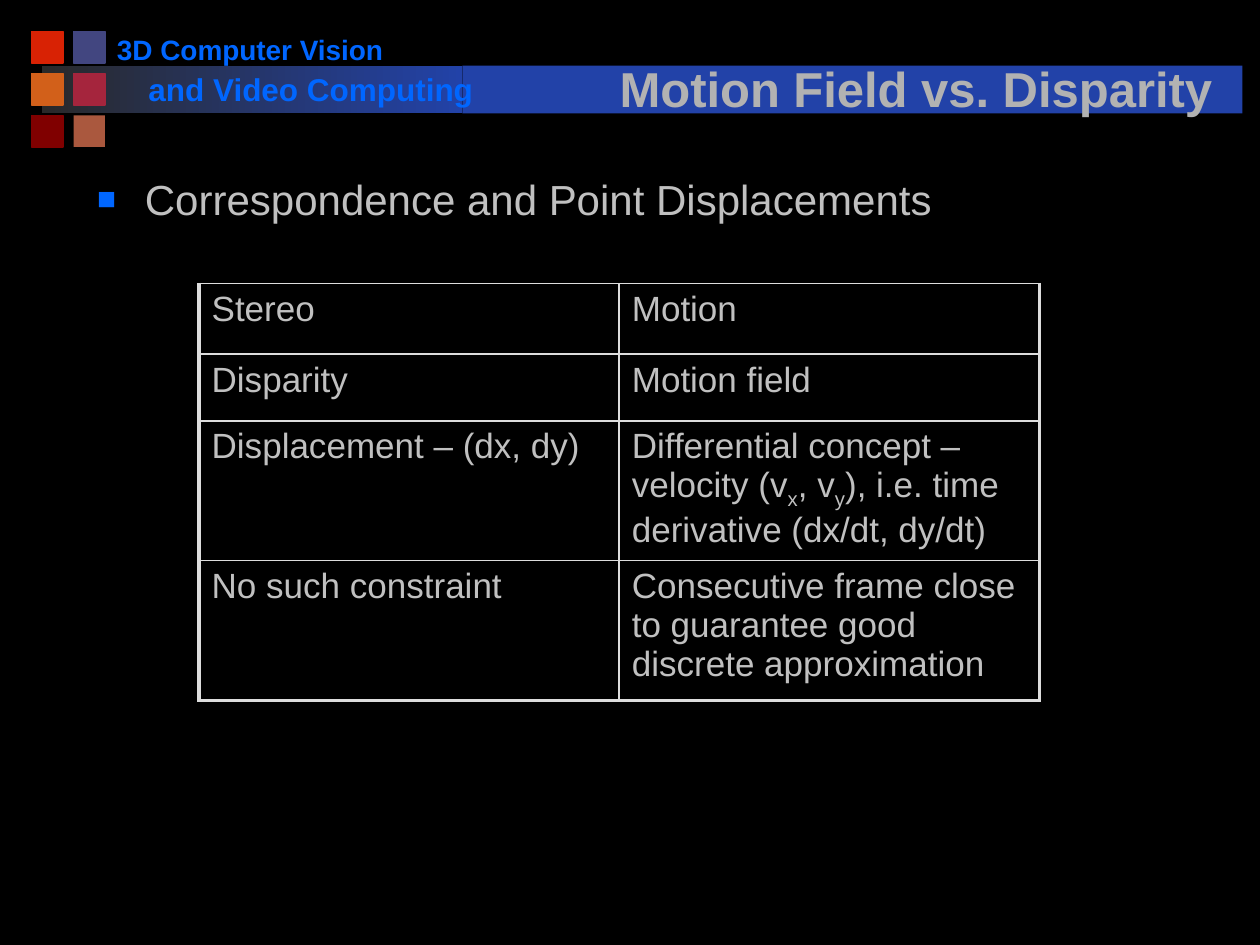
import pptx
import pptx.util
import pptx.dml.color
import pptx.enum.shapes
import pptx.enum.text
import pptx.oxml
import pptx.oxml.ns
import lxml.etree

WIDTH, HEIGHT = 10, 7.5
FONT = "Arial"
BLUE, BAND, GREY, BORDER = "0066FF", "2242A8", "C0C0C0", "DDDDDD"
SQUARES = [["D82204", "424680"], ["D2601A", "A5253D"], ["800000", "AA583E"]]
ROWS = [
    (0.56, "Stereo", "Motion"),
    (0.53, "Disparity", "Motion field"),
    (1.11, "Displacement – (dx, dy)",
     ["Differential concept – velocity (v", ("x",), ", v", ("y",),
      "), i.e. time derivative (dx/dt, dy/dt)"]),
    (1.11, "No such constraint",
     "Consecutive frame close to guarantee good discrete approximation"),
]


def inches(*values):
    return [pptx.util.Inches(value) for value in values]


def color(hex_text):
    return pptx.dml.color.RGBColor.from_string(hex_text)


def add_xml(parent, tag, **attributes):
    child = lxml.etree.SubElement(parent, pptx.oxml.ns.qn("a:" + tag))
    for name, value in attributes.items():
        child.set(name, str(value))
    return child


def write(frame, text, size=20, ink=GREY, bold=False, align="LEFT",
          anchor="TOP", wrap=True, percent_before=0):
    """Fill a text frame; a tuple among the pieces of text is a subscript."""
    frame.word_wrap = wrap
    frame.vertical_anchor = getattr(pptx.enum.text.MSO_ANCHOR, anchor)
    paragraph = frame.paragraphs[0]
    paragraph.alignment = getattr(pptx.enum.text.PP_ALIGN, align)
    if percent_before:
        before = add_xml(paragraph._p.get_or_add_pPr(), "spcBef")
        add_xml(before, "spcPct", val=percent_before * 1000)
    for piece in [text] if isinstance(text, str) else text:
        run = paragraph.add_run()
        run.text = "".join(piece)
        run.font.name, run.font.size = FONT, pptx.util.Pt(size)
        run.font.bold, run.font.color.rgb = bold, color(ink)
        if isinstance(piece, tuple):
            run.font._element.set("baseline", "-25000")
    return paragraph


def add_box(slide, box, fill, outlined=False):
    shape = slide.shapes.add_shape(
        pptx.enum.shapes.MSO_SHAPE.RECTANGLE, *inches(*box))
    shape.shadow.inherit = False
    if isinstance(fill, str):
        shape.fill.solid()
        shape.fill.fore_color.rgb = color(fill)
    else:
        shape.fill.gradient()
        shape.fill.gradient_angle = 0
        for stop, hex_text, position in zip(shape.fill.gradient_stops, fill, (0, 1)):
            stop.color.rgb, stop.position = color(hex_text), position
    if outlined:
        shape.line.color.rgb = color(fill)
        shape.line.width = pptx.util.Pt(1)
    else:
        shape.line.fill.background()


def add_header(slide, left, top):
    """Band, grid of squares and course name."""
    pitch, side = 1 / 3, 0.25
    band_top, band_height, split = top + 0.27, 0.38, left + 3.42
    add_box(slide, (left + 0.08, band_top, split - left - 0.08, band_height),
            ("292929", BAND))
    add_box(slide, (split, band_top, 6.19, band_height), BAND)
    for row, fills in enumerate(SQUARES):
        for column, fill in enumerate(fills):
            add_box(slide, (left + column * pitch, top + row * pitch, side, side),
                    fill, outlined=fill != SQUARES[-1][-1])
    for text, size, box, wrap in (
            ("3D Computer Vision", 16, (left + 0.58, top - 0.04, 2.32, 0.37), False),
            ("and Video Computing", 18, (left + 0.83, top + 0.26, 2.83, 0.4), True)):
        textbox = slide.shapes.add_textbox(*inches(*box))
        write(textbox.text_frame, text, size=size, ink=BLUE, bold=True, wrap=wrap)


def place(slide, placeholder, box):
    """Move a placeholder to the box and in front of the header."""
    placeholder.left, placeholder.top, placeholder.width, placeholder.height = inches(*box)
    placeholder.text_frame.auto_size = pptx.enum.text.MSO_AUTO_SIZE.NONE
    slide.shapes.element.append(placeholder.element)
    return placeholder.text_frame


def add_title(slide, box):
    frame = place(slide, slide.shapes.title, box)
    paragraph = write(frame, "Motion Field vs. Disparity", size=28, ink="B2B2B2",
                      bold=True, align="CENTER", anchor="BOTTOM")
    # Text shadow, right after the fill of the run
    effects = pptx.oxml.parse_xml(
        '<a:effectLst %s><a:outerShdw blurRad="38100" dist="38100" dir="2700000">'
        '<a:srgbClr val="000000"/></a:outerShdw></a:effectLst>'
        % pptx.oxml.ns.nsdecls("a"))
    font = paragraph.runs[0].font._element
    font.find(pptx.oxml.ns.qn("a:solidFill")).addnext(effects)


def add_body(slide, box):
    frame = place(slide, slide.placeholders[1], box)
    paragraph = write(frame, "Correspondence and Point Displacements", size=24,
                      percent_before=20)
    properties = paragraph._p.get_or_add_pPr()
    indent = pptx.util.Inches(0.38)
    properties.set("marL", str(indent))
    properties.set("indent", str(-indent))
    add_xml(add_xml(properties, "buClr"), "srgbClr", val=BLUE)
    add_xml(properties, "buSzPct", val=75000)
    add_xml(properties, "buFont", typeface=FONT)
    add_xml(properties, "buChar", char="■")


def set_borders(cell, widths):
    properties = cell._tc.get_or_add_tcPr()
    for index, (side, width) in enumerate(zip("LRTB", widths)):
        line = add_xml(properties, "ln" + side, w=int(pptx.util.Pt(width)))
        add_xml(add_xml(line, "solidFill"), "srgbClr", val=BORDER)
        properties.insert(index, line)


def add_comparison(slide, left, top, width):
    height = sum(row[0] for row in ROWS)
    table = slide.shapes.add_table(
        len(ROWS), 2, *inches(left, top, width, height)).table
    table.first_row = table.horz_banding = False
    for column in table.columns:
        column.width = pptx.util.Inches(width / 2)
    thin, thick = 1, 2.25
    for row, (row_height, *texts) in enumerate(ROWS):
        table.rows[row].height = pptx.util.Inches(row_height)
        for column, text in enumerate(texts):
            cell = table.cell(row, column)
            cell.fill.background()
            write(cell.text_frame, text, percent_before=20)
            set_borders(cell, (thin if column else thick,
                               thick if column else thin,
                               thin,
                               thick if row == len(ROWS) - 1 else thin))


def main():
    presentation = pptx.Presentation()
    presentation.slide_width, presentation.slide_height = inches(WIDTH, HEIGHT)
    slide = presentation.slides.add_slide(presentation.slide_layouts[1])
    slide.background.fill.solid()
    slide.background.fill.fore_color.rgb = color("000000")
    add_header(slide, 0.25, 0.25)
    add_title(slide, (4.58, 0.31, 5.38, 0.67))
    add_body(slide, (0.67, 1.33, 8.58, 0.58))
    add_comparison(slide, 1.58, 2.25, 6.67)
    presentation.save("out.pptx")


if __name__ == "__main__":
    main()
